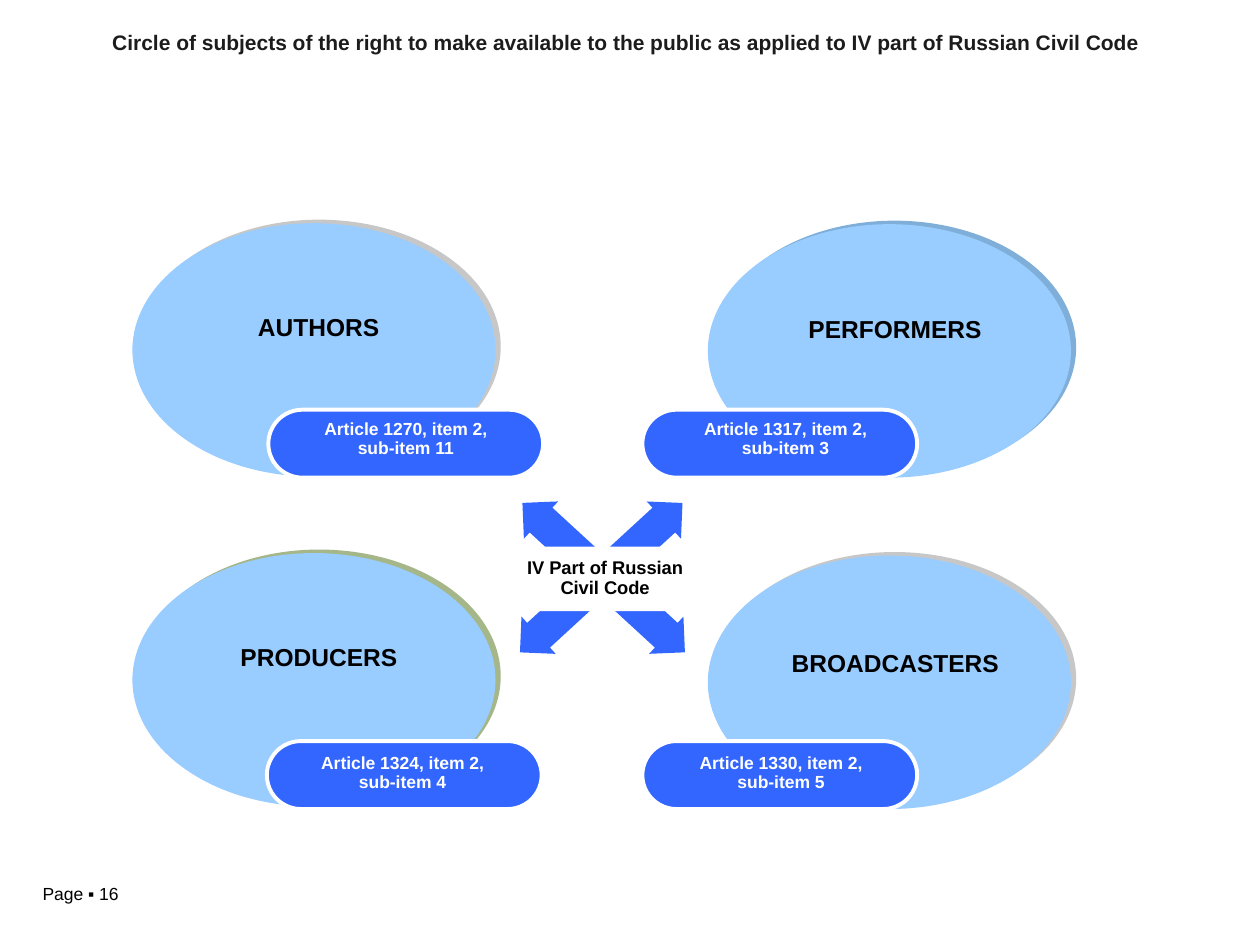
from dataclasses import dataclass

from lxml.etree import SubElement
from pptx import Presentation
from pptx.dml.color import RGBColor
from pptx.enum.shapes import MSO_SHAPE
from pptx.enum.text import MSO_ANCHOR, PP_ALIGN
from pptx.oxml.ns import qn
from pptx.util import Cm, Pt

WHITE = RGBColor(0xFF, 0xFF, 0xFF)
BLACK = RGBColor(0x00, 0x00, 0x00)
CHARCOAL = RGBColor(0x1C, 0x1C, 0x1C)
SKY = RGBColor(0x99, 0xCC, 0xFF)
BLUE = RGBColor(0x33, 0x66, 0xFF)
GRAY_SHADOW = RGBColor(0x91, 0x91, 0x91)
BLUE_SHADOW = RGBColor(0x00, 0x61, 0xB2)
GREEN_SHADOW = RGBColor(0x4C, 0x70, 0x13)


@dataclass(frozen=True)
class Box:
    left: float
    top: float
    width: float
    height: float

    def lengths(self) -> tuple:
        return Cm(self.left), Cm(self.top), Cm(self.width), Cm(self.height)


@dataclass(frozen=True)
class Subject:
    name: str
    name_box: Box
    article: str
    article_box: Box
    ellipse_corner: tuple[float, float]
    pill_corner: tuple[float, float]
    shadow: RGBColor


SUBJECTS = (
    Subject("AUTHORS", Box(3.96, 6.07, 4.93, 1.09),
            "Article 1270, item 2, sub-item 11", Box(5.97, 8.31, 4.42, 1.09),
            (2.67, 4.5), (5.41, 8.26), GRAY_SHADOW),
    Subject("PERFORMERS", Box(15.62, 6.12, 4.85, 1.09),
            "Article 1317, item 2, sub-item 3", Box(13.64, 8.31, 4.39, 1.09),
            (14.27, 4.52), (12.95, 8.26), BLUE_SHADOW),
    Subject("PRODUCERS", Box(3.71, 12.73, 5.44, 1.09),
            "Article 1324, item 2, sub-item 4", Box(5.84, 15.04, 4.55, 1.09),
            (2.67, 11.15), (5.38, 14.94), GREEN_SHADOW),
    Subject("BROADCASTERS", Box(14.94, 12.04, 6.22, 2.72),
            "Article 1330, item 2, sub-item 5", Box(13.46, 15.04, 4.57, 1.09),
            (14.27, 11.2), (12.95, 14.94), GRAY_SHADOW),
)
ELLIPSE_SIZE = (7.32, 5.11)
PILL_SIZE = (5.54, 1.37)
ARROWS = ((11.66, 312.6), (11.61, 47.4))

LABEL = {"alignment": PP_ALIGN.CENTER, "line_spacing": 0.9}
CENTERED = {"alignment": PP_ALIGN.CENTER}


def set_values(target, values: dict) -> None:
    for name, value in values.items():
        setattr(target, name, value)


def write_text(shape, text: str, size: float, color: RGBColor, layout: dict,
               bold: bool = True, anchor=MSO_ANCHOR.MIDDLE) -> None:
    frame = shape.text_frame
    set_values(frame, {"word_wrap": True, "vertical_anchor": anchor})
    paragraph = frame.paragraphs[0]
    paragraph.text = text
    set_values(paragraph, layout)
    set_values(paragraph.font, {"name": "Arial", "size": Pt(size), "bold": bold})
    paragraph.font.color.rgb = color


def add_text(slide, box: Box, text: str, size: float, color: RGBColor,
             layout: dict, **options) -> None:
    write_text(slide.shapes.add_textbox(*box.lengths()), text, size, color, layout, **options)


def add_filled(slide, kind: MSO_SHAPE, box: Box, fill: RGBColor, adjustments: tuple = ()):
    shape = slide.shapes.add_shape(kind, *box.lengths())
    shape.shadow.inherit = False
    shape.fill.solid()
    shape.fill.fore_color.rgb = fill
    shape.line.fill.background()
    for index, value in enumerate(adjustments):
        shape.adjustments[index] = value
    return shape


def add_shadow(shape, color: RGBColor) -> None:
    effects = shape._element.spPr.find(qn("a:effectLst"))
    shadow = SubElement(effects, qn("a:outerShdw"), blurRad="0", dist=str(Pt(3.6)),
                        dir=str(326 * 60000), algn="ctr", rotWithShape="0")
    shade = SubElement(shadow, qn("a:srgbClr"), val=str(color))
    SubElement(shade, qn("a:alpha"), val="50000")


def add_subject(slide, subject: Subject) -> None:
    ellipse = add_filled(slide, MSO_SHAPE.OVAL, Box(*subject.ellipse_corner, *ELLIPSE_SIZE), SKY)
    add_shadow(ellipse, subject.shadow)
    pill = add_filled(slide, MSO_SHAPE.ROUNDED_RECTANGLE,
                      Box(*subject.pill_corner, *PILL_SIZE), BLUE, (0.5,))
    pill.line.color.rgb = WHITE
    pill.line.width = Pt(2.25)
    add_text(slide, subject.article_box, subject.article, 10, WHITE, LABEL)
    add_text(slide, subject.name_box, subject.name, 14, BLACK, LABEL)


def main() -> None:
    presentation = Presentation()
    set_values(presentation, {"slide_width": Cm(25.4), "slide_height": Cm(19.05)})
    slide = presentation.slides.add_slide(presentation.slide_layouts[6])

    add_text(slide, Box(0.61, 17.68, 3.73, 0.69), "Page ▪ 16", 10, BLACK, {},
             bold=False, anchor=MSO_ANCHOR.TOP)
    for left, rotation in ARROWS:
        arrow = add_filled(slide, MSO_SHAPE.UP_DOWN_ARROW, Box(left, 9.42, 1.02, 4.45),
                           BLUE, (0.431, 0.664))
        arrow.rotation = rotation
    for subject in SUBJECTS:
        add_subject(slide, subject)
    center = add_filled(slide, MSO_SHAPE.RECTANGLE, Box(10.31, 11.02, 3.78, 1.3), WHITE)
    write_text(center, "IV Part of Russian Civil Code", 10.5, BLACK, LABEL)
    add_text(slide, Box(0.46, 0.48, 24.33, 0.76),
             "Circle of subjects of the right to make available to the public "
             "as applied to IV part of Russian Civil Code",
             12, CHARCOAL, CENTERED, anchor=MSO_ANCHOR.TOP)

    presentation.save("out.pptx")


if __name__ == "__main__":
    main()
